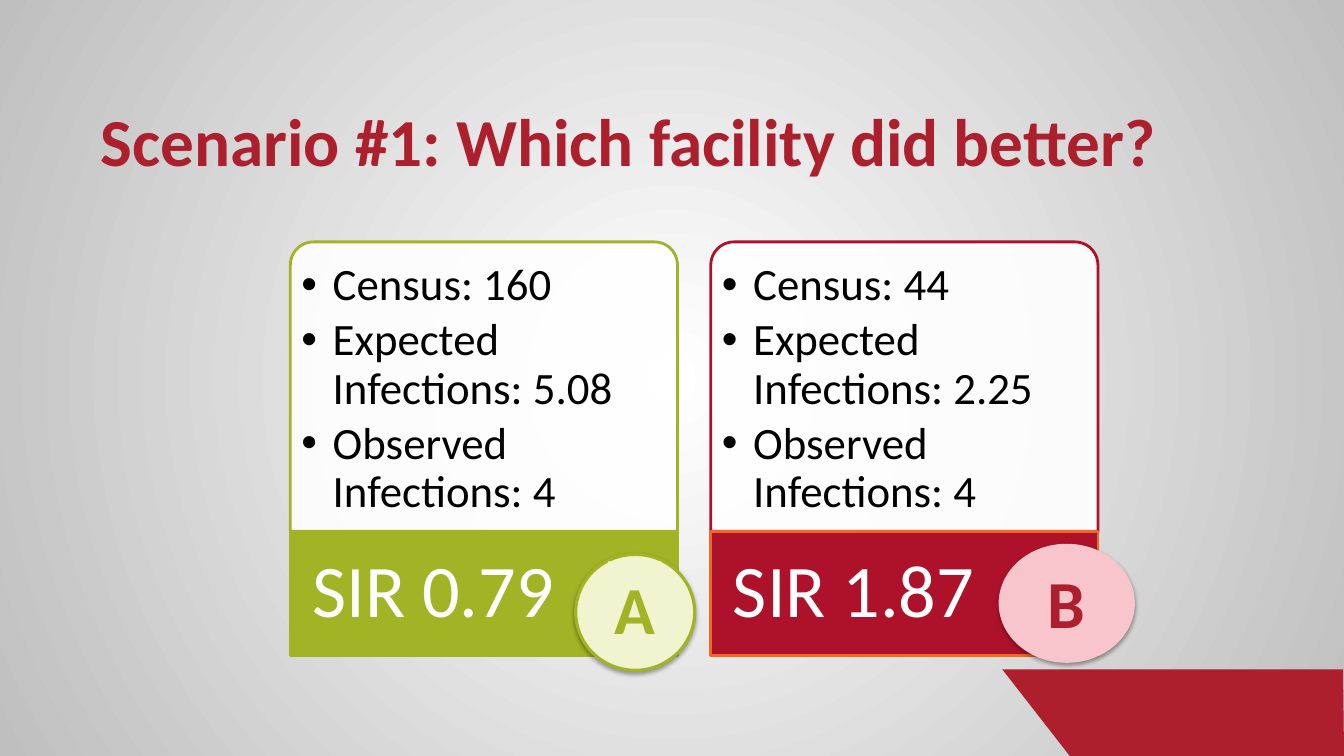
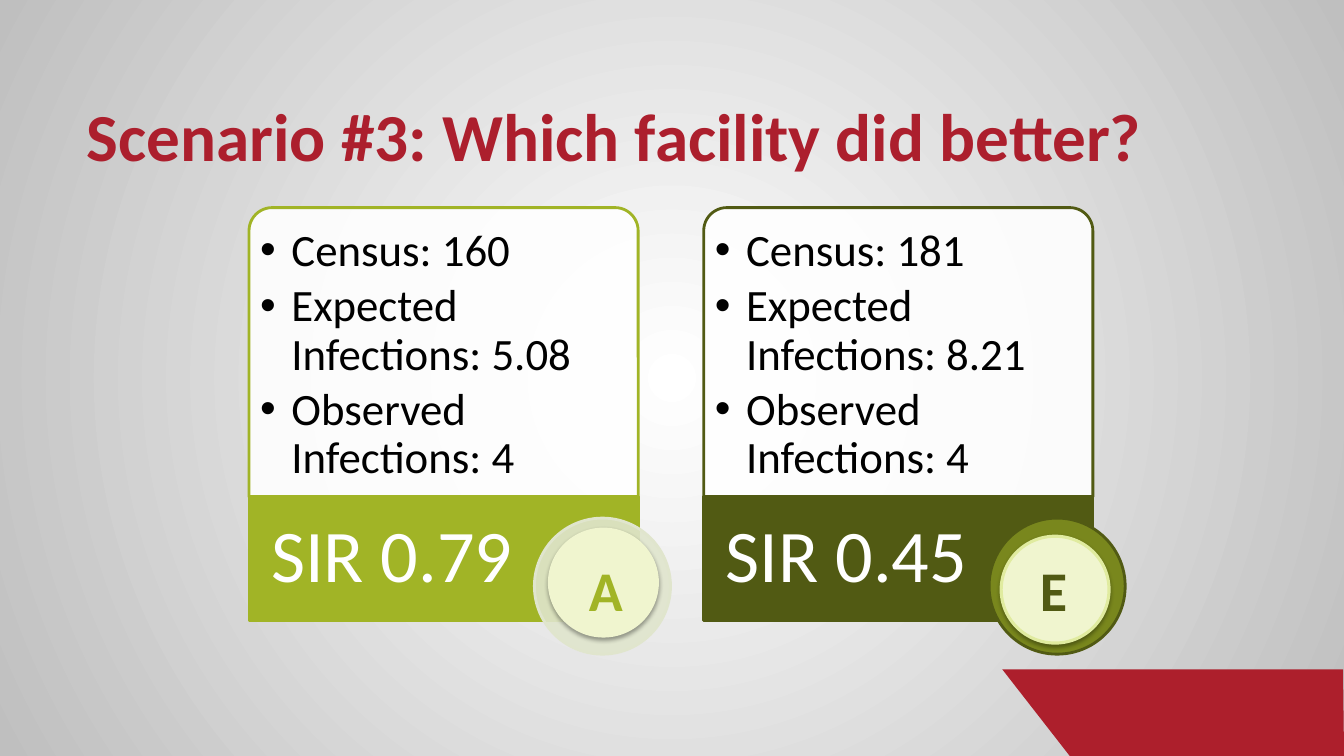
from lxml import etree
from pptx import Presentation
from pptx.dml.color import RGBColor
from pptx.enum.shapes import MSO_SHAPE as SHAPE
from pptx.enum.text import MSO_ANCHOR as ANCHOR, MSO_AUTO_SIZE as AUTOSIZE, PP_ALIGN as ALIGN
from pptx.oxml.ns import qn
from pptx.util import Inches, Pt

COLORS = {
    "white": "FFFFFF", "black": "000000", "gray": "BFBFBF",
    "title": "AC1F2D", "band": "AD1F2C", "crimson": "AD122A", "orange": "F26721",
    "green": "A1B426", "olive": "515A13", "moss": "79871D",
    "cream": "F0F5CF", "lime": "E0EB9F", "sage": "E0E5CD", "pink": "F9C5CD",
}
FONT = "Calibri"
BODY_HEIGHT, BAR_HEIGHT = 2.87, 1.23

# Boxes are left, top, width, height in inches; a ring is box, fill, line, opacity
SCENARIOS = [
    {"title": "Scenario #1: Which facility did better?", "title_at": (0.9, 0.31),
     "left": 2.88, "top": 2.4, "width": 3.84, "pitch": 4.17, "letter_size": 48,
     "facilities": [
         {"letter": "A", "census": "160", "expected": "5.08", "sir": "0.79",
          "color": "green", "bar_line": "green", "ring": None,
          "badge": (5.71, 5.5, 1.18, 1.15), "badge_fill": "cream", "badge_line": "green",
          "letter_box": (6.03, 5.57, 0.53, 0.91), "letter_fill": "cream",
          "letter_color": "green"},
         {"letter": "B", "census": "44", "expected": "2.25", "sir": "1.87",
          "color": "crimson", "bar_line": "orange", "ring": None,
          "badge": (9.92, 5.41, 1.32, 1.15), "badge_fill": "pink", "badge_line": "pink",
          "letter_box": (10.3, 5.51, 0.56, 0.91), "letter_fill": "pink",
          "letter_color": "band"},
     ]},
    {"title": "Scenario #3: Which facility did better?", "title_at": (0.76, 0.26),
     "left": 2.47, "top": 2.06, "width": 3.86, "pitch": 4.51, "letter_size": 40,
     "facilities": [
         {"letter": "A", "census": "160", "expected": "5.08", "sir": "0.79",
          "color": "green", "bar_line": "green",
          "ring": ((5.3, 5.14, 1.35, 1.35), "sage", "sage", 90),
          "badge": (5.45, 5.25, 1.07, 1.06), "badge_fill": "cream", "badge_line": "cream",
          "letter_box": (5.74, 5.46, 0.54, 0.77), "letter_fill": None,
          "letter_color": "green"},
         {"letter": "E", "census": "181", "expected": "8.21", "sir": "0.45",
          "color": "olive", "bar_line": "olive",
          "ring": ((9.81, 5.14, 1.35, 1.35), "moss", "olive", 100),
          "badge": (9.93, 5.32, 1.07, 1.06), "badge_fill": "cream", "badge_line": "lime",
          "letter_box": (10.21, 5.46, 0.48, 0.77), "letter_fill": "cream",
          "letter_color": "olive"},
     ]},
]


def add_block(slide, kind, box, fill, line=None, line_width=2, opacity=100):
    block = slide.shapes.add_shape(kind, *map(Inches, box))
    block.shadow.inherit = False
    if fill:
        block.fill.solid()
        block.fill.fore_color.rgb = RGBColor.from_string(COLORS[fill])
        if opacity < 100:
            color = block.element.spPr.find(qn("a:solidFill"))[0]
            etree.SubElement(color, qn("a:alpha"), val=str(opacity * 1000))
    else:
        block.fill.background()
    if line:
        block.line.color.rgb = RGBColor.from_string(COLORS[line])
        block.line.width = Pt(line_width)
    else:
        block.line.fill.background()
    return block


def write(shape, lines, size, color, margins, anchor, bold=False, align=ALIGN.LEFT, wrap=True):
    frame = shape.text_frame
    frame.text = "\n".join(lines)
    frame.auto_size = AUTOSIZE.NONE
    frame.word_wrap = wrap
    frame.vertical_anchor = anchor
    (frame.margin_left, frame.margin_top,
     frame.margin_right, frame.margin_bottom) = map(Inches, margins)
    for paragraph in frame.paragraphs:
        paragraph.alignment = align
        paragraph.font.name = FONT
        paragraph.font.size = Pt(size)
        paragraph.font.bold = bold
        paragraph.font.color.rgb = RGBColor.from_string(COLORS[color])
    return frame.paragraphs


prs = Presentation()
prs.slide_width, prs.slide_height = Inches(13.33), Inches(7.5)
two_lists = prs.slide_layouts[3]

# Shared background: white centre fading to gray
background = prs.slide_master.background.fill
background.gradient()
for stop, name in zip(background.gradient_stops, ("white", "gray")):
    stop.color.rgb = RGBColor.from_string(COLORS[name])
gradient = prs.slide_master.element.find(".//" + qn("a:gradFill"))
gradient.remove(gradient.find(qn("a:lin")))
circle = etree.SubElement(gradient, qn("a:path"), path="circle")
etree.SubElement(circle, qn("a:fillToRect"), l="50000", t="50000", r="50000", b="50000")

for scenario in SCENARIOS:
    slide = prs.slides.add_slide(two_lists)

    # Corner band, drawn once and moved to the back of the layout
    if scenario is SCENARIOS[0]:
        outline = slide.shapes.build_freeform(Inches(9.94), Inches(6.64))
        outline.add_line_segments(
            [(Inches(x), Inches(y)) for x, y in ((10.61, 7.5), (13.33, 7.5), (13.32, 6.64))])
        band = outline.convert_to_shape()
        band.shadow.inherit = False
        band.fill.solid()
        band.fill.fore_color.rgb = RGBColor.from_string(COLORS["band"])
        band.line.fill.background()
        band.element.nvSpPr.cNvPr.set("id", "20")
        two_lists.shapes.element.insert(2, band.element)

    # Title
    title = slide.shapes.title
    title.left, title.top = map(Inches, scenario["title_at"])
    title.width, title.height = Inches(11.82), Inches(1.49)
    heading = write(title, [scenario["title"]], 48, "title", (0.1, 0, 0.1, 0),
                    ANCHOR.BOTTOM, bold=True)
    heading[0].line_spacing = 0.9

    top, width = scenario["top"], scenario["width"]
    bar_top = top + BODY_HEIGHT
    for column, facility in enumerate(scenario["facilities"]):
        left = scenario["left"] + column * scenario["pitch"]

        # Card with the facility's figures
        card = add_block(slide, SHAPE.ROUND_2_SAME_RECTANGLE, (left, top, width, BODY_HEIGHT),
                         "white", facility["color"], opacity=90)
        card.adjustments[0] = 0.08
        figures = slide.placeholders[column + 1]
        figures.left, figures.top = Inches(left + 0.07), Inches(top + 0.07)
        figures.width, figures.height = Inches(width - 0.14), Inches(BODY_HEIGHT - 0.07)
        slide.shapes.element.append(figures.element)
        facts = [f"Census: {facility['census']}",
                 f"Expected Infections: {facility['expected']}",
                 "Observed Infections: 4"]
        for paragraph in write(figures, facts, 32, "black", (0.04, 0.13, 0.04, 0.04), ANCHOR.TOP):
            indent = paragraph._p.get_or_add_pPr()
            indent.set("marL", str(Inches(0.31)))
            indent.set("indent", str(Inches(-0.31)))
            paragraph.line_spacing = 0.9
            paragraph.space_before = Pt(0)
            paragraph.space_after = Pt(4.8)

        # Ratio bar
        bar = add_block(slide, SHAPE.RECTANGLE, (left, bar_top, width, BAR_HEIGHT),
                        facility["color"], facility["bar_line"])
        ratio = write(bar, [f"SIR {facility['sir']}"], 53, "white", (0.22, 0, 0.07, 0),
                      ANCHOR.MIDDLE)
        ratio[0].line_spacing = 0.9

        # Badge with the facility's letter
        if facility["ring"]:
            ring_box, ring_fill, ring_line, ring_opacity = facility["ring"]
            add_block(slide, SHAPE.OVAL, ring_box, ring_fill, ring_line, opacity=ring_opacity)
        badge = add_block(slide, SHAPE.FLOWCHART_CONNECTOR, facility["badge"],
                          facility["badge_fill"], facility["badge_line"], 2.25)
        shadow = etree.SubElement(
            badge.element.spPr.find(qn("a:effectLst")), qn("a:outerShdw"),
            blurRad=str(Pt(3.1)), dist=str(Pt(1.8)), dir="5400000", rotWithShape="0")
        shade = etree.SubElement(shadow, qn("a:srgbClr"), val=COLORS["black"])
        etree.SubElement(shade, qn("a:alpha"), val="35000")
        letter = add_block(slide, SHAPE.RECTANGLE, facility["letter_box"], facility["letter_fill"])
        write(letter, [facility["letter"]], scenario["letter_size"], facility["letter_color"],
              (0.1, 0.05, 0.1, 0.05), ANCHOR.MIDDLE, bold=True, align=ALIGN.CENTER, wrap=False)

prs.save("out.pptx")
